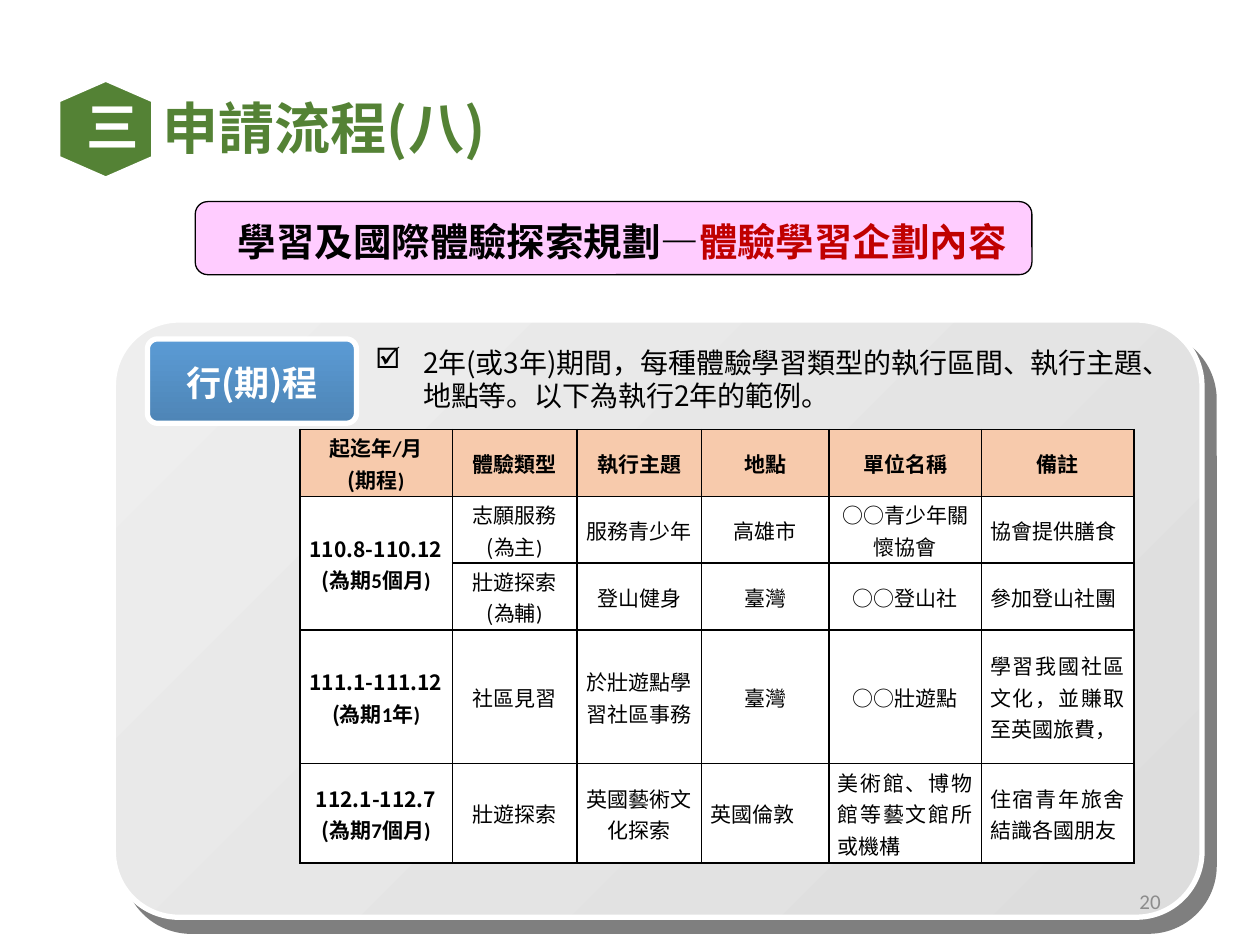
import itertools
from dataclasses import dataclass

import pptx
import pptx.dml.color
import pptx.enum.shapes
import pptx.enum.text
import pptx.oxml
import pptx.oxml.ns
import pptx.util

NOTO, CALIBRI = "Noto Sans CJK SC", "Calibri"
GREEN, BLACK, WHITE, PEACH = "548235", "000000", "FFFFFF", "F7CAAC"
ALIGN = pptx.enum.text.PP_ALIGN
MIDDLE = pptx.enum.text.MSO_ANCHOR.MIDDLE
ROUNDED = pptx.enum.shapes.MSO_SHAPE.ROUNDED_RECTANGLE
NAMESPACE = pptx.oxml.ns.nsdecls("a")


def grid(count: float) -> int:
    """Length of a number of grid columns or rows; the page has 100 by 75."""
    return pptx.util.Inches(round(count / 10, 3))


def colour(value: str) -> pptx.dml.color.RGBColor:
    return pptx.dml.color.RGBColor.from_string(value)


def xml(markup: str):
    """Parse one DrawingML element written without its namespace declaration."""
    head, rest = markup.split(" ", 1)
    return pptx.oxml.parse_xml(f"{head} {NAMESPACE} {rest}")


@dataclass
class Frame:
    column: float
    row: float
    columns: float
    rows: float

    def lengths(self) -> list[int]:
        return [grid(n) for n in (self.column, self.row, self.columns, self.rows)]


@dataclass
class Style:
    size: float
    color: str = BLACK
    bold: bool = False
    face: str = NOTO
    align: ALIGN = ALIGN.LEFT


@dataclass
class Entry:
    text: str
    align: ALIGN = ALIGN.CENTER


def style_para(para, style: Style) -> None:
    para.alignment = style.align
    font = para.font
    font.size, font.bold, font.name = pptx.util.Pt(style.size), style.bold, style.face
    font.color.rgb = colour(style.color)
    font._rPr.find(pptx.oxml.ns.qn("a:latin")).addnext(xml(f'<a:ea typeface="{NOTO}"/>'))


def set_margins(frame, across: float, down: float) -> None:
    frame.margin_left = frame.margin_right = pptx.util.Inches(across)
    frame.margin_top = frame.margin_bottom = pptx.util.Inches(down)


def add_text(page, place: Frame, text: str, style: Style):
    box = page.shapes.add_textbox(*place.lengths())
    box.text_frame.word_wrap = True
    para = box.text_frame.paragraphs[0]
    para.add_run().text = text
    style_para(para, style)
    return box


def add_panel(page, place: Frame, fills: list[str], line: str, width: float,
              corner: float, angle: float = 0):
    panel = page.shapes.add_shape(ROUNDED, *place.lengths())
    panel.shadow.inherit = False
    panel.adjustments[0] = corner
    if len(fills) == 1:
        panel.fill.solid()
        panel.fill.fore_color.rgb = colour(fills[0])
    else:
        panel.fill.gradient()
        panel.fill.gradient_angle = 360 - angle
        for stop, value in zip(panel.fill.gradient_stops, fills):
            stop.color.rgb = colour(value)
    panel.line.color.rgb = colour(line)
    panel.line.width = pptx.util.Pt(width)
    return panel


def add_hexagon(page, place: Frame, text: str) -> None:
    left, top, width, height = place.lengths()
    points = [(left + round(width * x), top + round(height * y))
              for x, y in ((0.5, 0), (1, 0.21), (1, 0.79), (0.5, 1), (0, 0.79), (0, 0.21))]
    builder = page.shapes.build_freeform(*points[0])
    builder.add_line_segments(points[1:], close=True)
    badge = builder.convert_to_shape()
    badge.shadow.inherit = False
    badge.fill.solid()
    badge.fill.fore_color.rgb = colour(GREEN)
    badge.line.color.rgb = colour(WHITE)
    badge.line.width = pptx.util.Pt(1.5)
    frame = badge.text_frame
    frame.vertical_anchor, frame.word_wrap = MIDDLE, True
    set_margins(frame, 0.22, 0.24)
    para = frame.paragraphs[0]
    para.add_run().text = text
    para.line_spacing = 0.9
    style_para(para, Style(30, WHITE, True, align=ALIGN.CENTER))


def fill_cell(cell, entry: Entry, bold: bool, fill: str) -> None:
    cell.fill.solid()
    cell.fill.fore_color.rgb = colour(fill)
    cell.vertical_anchor = MIDDLE
    set_margins(cell, 0.07, 0)
    frame = cell.text_frame
    for index, line in enumerate(entry.text.split("\n")):
        para = frame.add_paragraph() if index else frame.paragraphs[0]
        # Leading figures, brackets and circles take the other face
        lead = "".join(itertools.takewhile("(○0123456789.-".count, line))
        for text, face in ((lead, NOTO), (line[len(lead):], CALIBRI)):
            if text:
                span = para.add_run()
                span.text, span.font.name = text, face
        para.line_spacing = pptx.util.Pt(18)
        style_para(para, Style(12, bold=bold, face=CALIBRI, align=entry.align))


def add_borders(cell) -> None:
    properties = cell._tc.get_or_add_tcPr()
    for index, side in enumerate(("lnL", "lnR", "lnT", "lnB")):
        properties.insert(index, xml(
            f'<a:{side} w="12700"><a:solidFill><a:srgbClr val="{BLACK}"/>'
            f'</a:solidFill></a:{side}>'))


def add_schedule(page, place: Frame, columns: list[float], rows: list[float],
                 entries: list[list[Entry]]) -> None:
    table = page.shapes.add_table(len(rows), len(columns), *place.lengths()).table
    table.horz_banding = False
    for column, width in zip(table.columns, columns):
        column.width = grid(width)
    for r, (row, height) in enumerate(zip(table.rows, rows)):
        row.height = grid(height)
        for c, entry in enumerate(entries[r]):
            cell = table.cell(r, c)
            fill_cell(cell, entry, r == 0 or c == 0, PEACH if r == 0 else WHITE)
            add_borders(cell)
    table.cell(1, 0).merge(table.cell(2, 0))


def centred(*texts: str) -> list[Entry]:
    return [Entry(text) for text in texts]


def justified(*texts: str) -> list[Entry]:
    return [Entry(text, ALIGN.JUSTIFY) for text in texts]


SCHEDULE = [
    centred("起迄年/月\n(期程)", "體驗類型", "執行主題", "地點", "單位名稱", "備註"),
    centred("110.8-110.12\n(為期5個月)", "志願服務\n(為主)", "服務青少年", "高雄市",
            "○○青少年關懷協會") + justified("協會提供膳食"),
    centred("", "壯遊探索\n(為輔)", "登山健身", "臺灣", "○○登山社") + justified("參加登山社團"),
    centred("111.1-111.12\n(為期1年)", "社區見習", "於壯遊點學習社區事務", "臺灣",
            "○○壯遊點") + justified("學習我國社區文化，並賺取至英國旅費，"),
    centred("112.1-112.7\n(為期7個月)", "壯遊探索", "英國藝術文化探索")
    + justified("英國倫敦", "美術館、博物館等藝文館所或機構", "住宿青年旅舍結識各國朋友"),
]


def main() -> None:
    deck = pptx.Presentation()
    deck.slide_width, deck.slide_height = grid(100), grid(75)
    page = deck.slides.add_slide(deck.slide_layouts[5])

    # Section badge and title
    add_hexagon(page, Frame(4.7, 6.4, 7.4, 7.7), "三")
    title = page.shapes.title
    title.left, title.top, title.width, title.height = Frame(12.4, 6.9, 36.5, 7).lengths()
    title.text_frame.text = "申請流程(八)"
    title.text_frame.auto_size = pptx.enum.text.MSO_AUTO_SIZE.NONE
    title.text_frame.vertical_anchor = MIDDLE
    set_margins(title.text_frame, 0.05, 0.05)
    title.text_frame.paragraphs[0].line_spacing = 0.9
    style_para(title.text_frame.paragraphs[0], Style(32, GREEN, True))

    # Grey panel with its hard shadow
    panel = add_panel(page, Frame(9, 25.4, 86.4, 47.4), ["EEEEEE", "DDDDDD"], WHITE, 3, 0.11, 45)
    panel._element.spPr.find(pptx.oxml.ns.qn("a:effectLst")).append(xml(
        '<a:outerShdw dist="134620" dir="2940000" algn="tl" rotWithShape="0">'
        f'<a:srgbClr val="{BLACK}"><a:alpha val="50000"/></a:srgbClr></a:outerShdw>'))

    # Label and description
    add_panel(page, Frame(11.7, 26.9, 16.6, 6.7), ["5B9BD5", "4E85B6"], WHITE, 3, 0.12, 90)
    add_text(page, Frame(10.6, 28.2, 18.8, 4.7), "行(期)程",
             Style(20, WHITE, True, align=ALIGN.CENTER))
    note = add_text(page, Frame(28.8, 26.9, 65.8, 14.3),
                    "2年(或3年)期間，每種體驗學習類型的執行區間、執行主題、地點等。"
                    "以下為執行2年的範例。", Style(16))
    properties = note.text_frame.paragraphs[0]._p.get_or_add_pPr()
    properties.set("marL", str(grid(3.8)))
    properties.set("indent", str(-grid(3.8)))
    properties.insert(0, xml('<a:buChar char="☑"/>'))

    # Page number
    number = add_text(page, Frame(70.6, 69.5, 22.5, 4), "20",
                      Style(12, "8C8C8C", face=CALIBRI, align=ALIGN.RIGHT))
    number.text_frame.vertical_anchor = MIDDLE

    # Topic banner
    add_panel(page, Frame(15.5, 16, 66.4, 5.8), ["FFCCFF"], BLACK, 0.75, 0.17)
    banner = add_text(page, Frame(17.9, 16.8, 63.9, 4.7), "學習及國際體驗探索規劃—",
                      Style(22, bold=True))
    span = banner.text_frame.paragraphs[0].add_run()
    span.text = "體驗學習企劃內容"
    span.font.color.rgb = colour("C00000")

    # Schedule table
    add_schedule(page, Frame(23.8, 34.1, 66, 34.4), [12.1, 9.9, 9.9, 10.1, 12.1, 12.1],
                 [5.3, 5.3, 5.3, 10.6, 7.9], SCHEDULE)

    deck.save("out.pptx")


if __name__ == "__main__":
    main()
